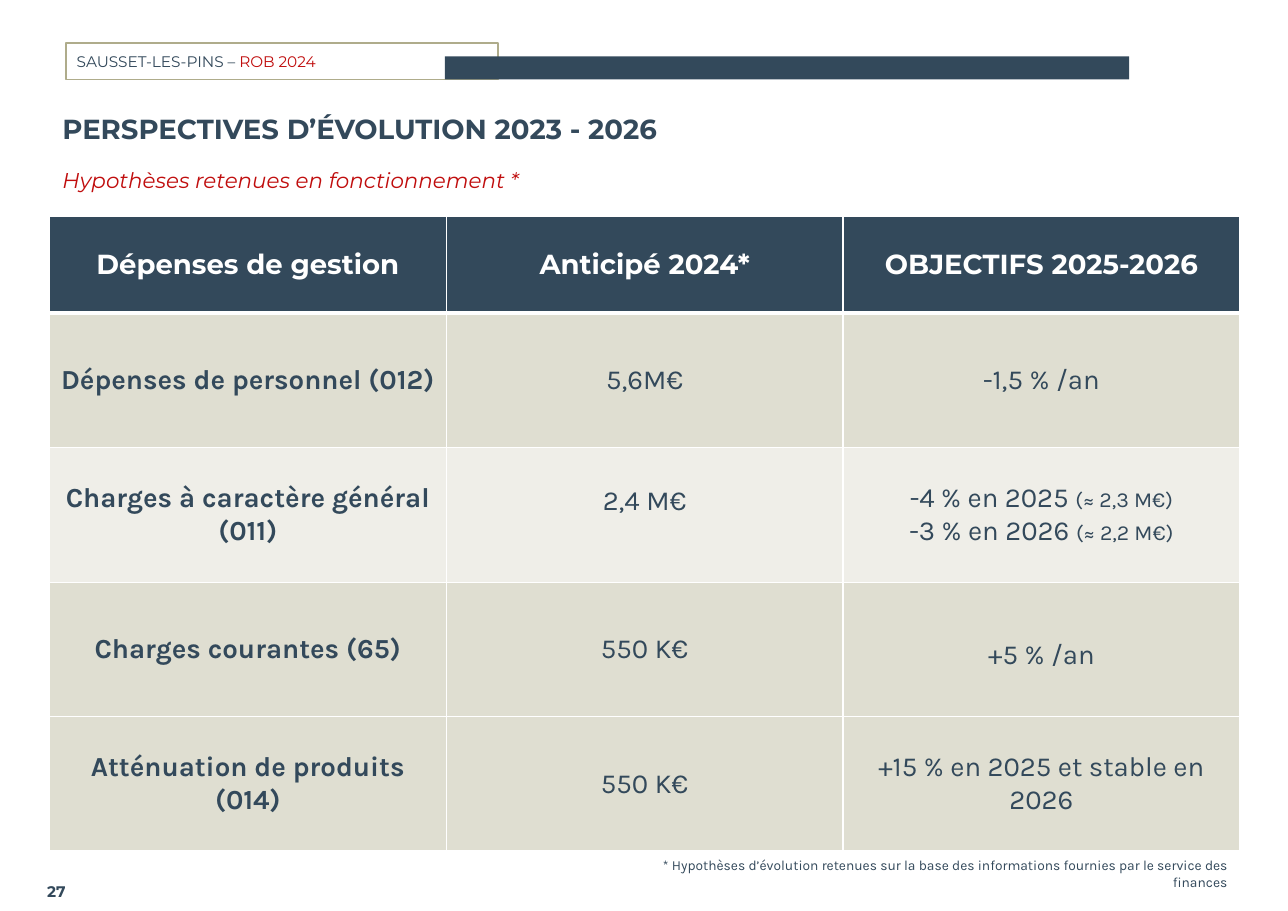
from dataclasses import dataclass

from lxml import etree
from pptx import Presentation
from pptx.dml.color import RGBColor
from pptx.enum import shapes, text
from pptx.oxml import ns
from pptx.util import Cm, Pt


@dataclass(frozen=True)
class Theme:
    navy: str = "33495B"
    red: str = "C00D0D"
    olive: str = "AFAC8B"
    sand: str = "DFDED1"
    pale: str = "EFEEE8"
    white: str = "FFFFFF"
    heading_font: str = "Montserrat"
    body_font: str = "Karla"
    large: int = 18
    medium: int = 14
    small: int = 10
    note: int = 9


def write(paragraph, content, *, size, font, color, bold=False, italic=False):
    run = paragraph.add_run()
    run.text = content
    run.font.size = Pt(size)
    run.font.name = font
    run.font.color.rgb = RGBColor.from_string(color)
    run.font.bold = bold
    run.font.italic = italic


class SlideBuilder:
    def __init__(self, slide, theme):
        self.slide = slide
        self.theme = theme

    def rectangle(self, left, top, width, height, fill=None, line=None):
        box = self.slide.shapes.add_shape(
            shapes.MSO_SHAPE.RECTANGLE, Cm(left), Cm(top), Cm(width), Cm(height))
        box.shadow.inherit = False
        if fill:
            box.fill.solid()
            box.fill.fore_color.rgb = RGBColor.from_string(fill)
        else:
            box.fill.background()
        if line:
            box.line.color.rgb = RGBColor.from_string(line)
            box.line.width = Pt(1)
        else:
            box.line.fill.background()
        return box

    def text_box(self, left, top, width, height, content, align=text.PP_ALIGN.LEFT,
                 inset=True, anchor=text.MSO_ANCHOR.TOP, **style):
        frame = self.slide.shapes.add_textbox(
            Cm(left), Cm(top), Cm(width), Cm(height)).text_frame
        frame.word_wrap = True
        frame.vertical_anchor = anchor
        if not inset:
            frame.margin_left = frame.margin_right = 0
            frame.margin_top = frame.margin_bottom = 0
        frame.paragraphs[0].alignment = align
        write(frame.paragraphs[0], content, **style)

    def banner(self, town, report):
        t = self.theme
        label = self.rectangle(1.52, 0.99, 9.96, 0.84, line=t.olive)
        label.text_frame.vertical_anchor = text.MSO_ANCHOR.MIDDLE
        paragraph = label.text_frame.paragraphs[0]
        paragraph.alignment = text.PP_ALIGN.LEFT
        for content, color in ((town, t.navy), (report, t.red)):
            write(paragraph, content, size=t.small, font=t.heading_font, color=color)
        self.rectangle(10.26, 1.3, 15.78, 0.53, fill=t.navy)

    def borders(self, cell, top, bottom):
        properties = cell._tc.get_or_add_tcPr()
        sides = (("lnL", 1), ("lnR", 1), ("lnT", top), ("lnB", bottom))
        for position, (side, width) in enumerate(sides):
            line = etree.Element(ns.qn(f"a:{side}"), w=str(Pt(width)))
            fill = etree.SubElement(line, ns.qn("a:solidFill"))
            etree.SubElement(fill, ns.qn("a:srgbClr"), val=self.theme.white)
            properties.insert(position, line)

    def cell(self, cell, lines, fill, **style):
        cell.fill.solid()
        cell.fill.fore_color.rgb = RGBColor.from_string(fill)
        cell.vertical_anchor = text.MSO_ANCHOR.MIDDLE
        for index, (main, detail) in enumerate(lines):
            frame = cell.text_frame
            paragraph = frame.add_paragraph() if index else frame.paragraphs[0]
            paragraph.alignment = text.PP_ALIGN.CENTER
            write(paragraph, main, size=self.theme.large, **style)
            if detail:
                write(paragraph, detail, size=self.theme.medium, **style)

    def table(self, left, top, column_width, row_heights, rows):
        t = self.theme
        columns = len(rows[0])
        table = self.slide.shapes.add_table(
            len(rows), columns, Cm(left), Cm(top),
            Cm(column_width * columns), Cm(sum(row_heights))).table
        for column in table.columns:
            column.width = Cm(column_width)
        for r, (height, row) in enumerate(zip(row_heights, rows)):
            table.rows[r].height = Cm(height)
            header = r == 0
            fill = t.navy if header else t.pale if r == 2 else t.sand
            for c, content in enumerate(row):
                lines = [(content, "")] if isinstance(content, str) else content
                cell = table.cell(r, c)
                self.cell(cell, lines, fill, bold=header or c == 0,
                          font=t.heading_font if header else t.body_font,
                          color=t.white if header else t.navy)
                self.borders(cell, 3 if r == 1 else 1, 3 if header else 1)
        return table


EXPENSES = [
    ("Dépenses de gestion", "Anticipé 2024*", "OBJECTIFS 2025-2026"),
    ("Dépenses de personnel (012)", "5,6M€", "-1,5 % /an"),
    ("Charges à caractère général (011)", "2,4 M€",
     [("-4 % en 2025 ", "(≈ 2,3 M€)"), ("-3 % en 2026 ", "(≈ 2,2 M€)")]),
    ("Charges courantes (65)", "550 K€", "+5 % /an"),
    ("Atténuation de produits (014)", "550 K€", "+15 % en 2025 et stable en 2026"),
]


def main():
    deck = Presentation()
    deck.slide_width, deck.slide_height = Cm(29.7), Cm(21)
    theme = Theme()
    page = SlideBuilder(deck.slides.add_slide(deck.slide_layouts[6]), theme)

    page.banner("SAUSSET-LES-PINS – ", "ROB 2024")
    page.text_box(1.09, 20.24, 6.83, 0.64, "27", inset=False,
                  anchor=text.MSO_ANCHOR.MIDDLE, size=theme.small,
                  font=theme.heading_font, color=theme.navy, bold=True)

    expenses = page.table(1.14, 4.98, 9.15, [2.24] + [3.1] * 4, EXPENSES)
    expenses.cell(2, 1).margin_bottom = Cm(0.77)
    expenses.cell(3, 2).margin_top = Cm(0.41)

    page.text_box(1.19, 2.46, 27.43, 0.84, "PERSPECTIVES D’ÉVOLUTION 2023 - 2026",
                  size=theme.large, font=theme.heading_font, color=theme.navy, bold=True)
    page.text_box(1.19, 3.73, 27.43, 0.84, "Hypothèses retenues en fonctionnement *",
                  size=theme.medium, font=theme.heading_font, color=theme.red, italic=True)
    page.text_box(14.55, 19.63, 14, 0.64,
                  "* Hypothèses d’évolution retenues sur la base des informations "
                  "fournies par le service des finances",
                  align=text.PP_ALIGN.RIGHT, size=theme.note,
                  font=theme.body_font, color=theme.navy)
    deck.save("out.pptx")


if __name__ == "__main__":
    main()
